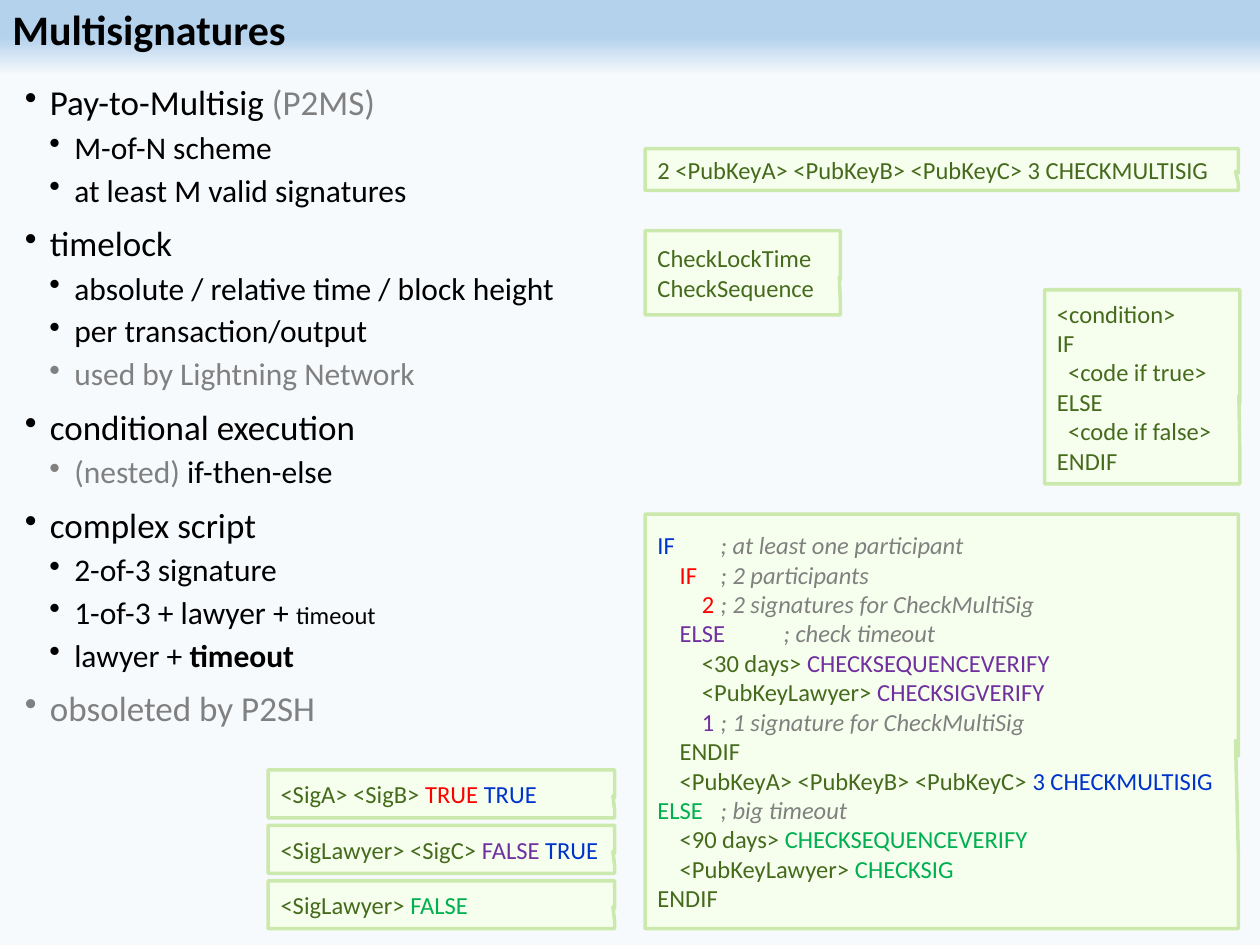
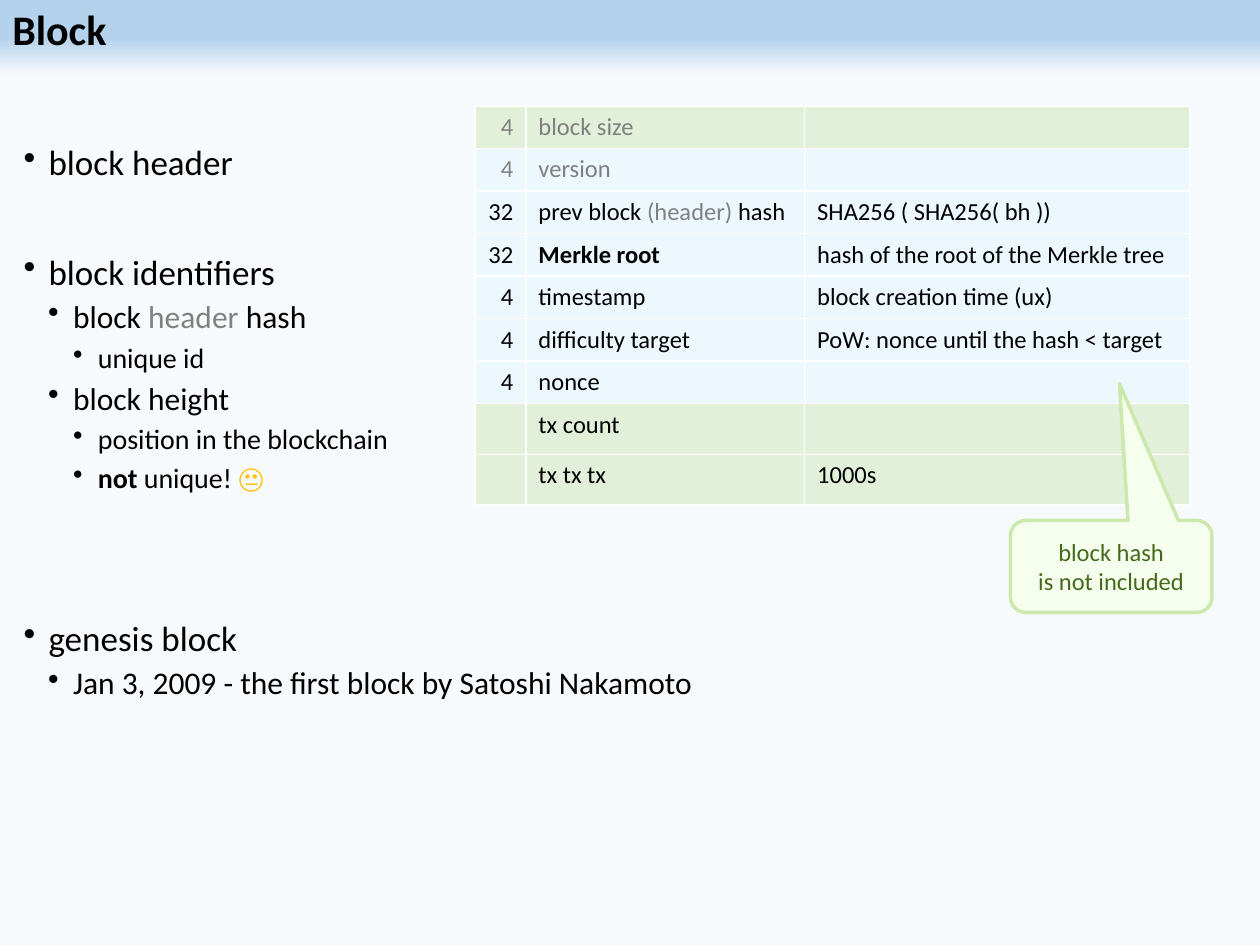
import copy
import dataclasses

import pptx
import pptx.dml.color
import pptx.enum.shapes
import pptx.enum.text
import pptx.oxml
import pptx.oxml.ns
import pptx.util

Pt = pptx.util.Pt
SHAPES = pptx.enum.shapes.MSO_SHAPE
ALIGN = pptx.enum.text.PP_ALIGN
ANCHOR = pptx.enum.text.MSO_ANCHOR


@dataclasses.dataclass(frozen=True)
class Theme:
    """Colours, font and type sizes shared by the slides."""
    font: str = "Calibri"
    black: str = "000000"
    grey: str = "808080"
    code: str = "456A1C"
    blue: str = "0033CC"
    red: str = "FF0000"
    purple: str = "7030A0"
    green: str = "00B050"
    yellow: str = "FFC000"
    callout_fill: str = "F6FFED"
    callout_line: str = "CCE9AD"
    outer_row: str = "E2F0D9"
    header_row: str = "ECF7FE"
    white: str = "FFFFFF"
    background: tuple = ((0, "B5D2EC"), (0.04, "B5D2EC"), (0.08, "F7FAFD"))
    title_size: int = 24
    code_size: int = 14
    level_sizes: tuple = (20, 18, 16)
    level_indents: tuple = (14.2, 28.2, 42.4)
    level_spacing: tuple = (10, 5, 5)


THEME = Theme()


def rgb(value):
    """Return a colour from its hexadecimal value."""
    return pptx.dml.color.RGBColor.from_string(value)


def set_values(target, values):
    """Set each attribute named in a dict."""
    for name, value in values.items():
        setattr(target, name, value)


def add_runs(paragraph, content, size, color):
    """Add a string, or a list of strings and (text, colour, format) tuples."""
    for part in [content] if isinstance(content, str) else content:
        text, run_color, values = part if isinstance(part, tuple) else (part, color, {})
        for index, line in enumerate(text.split("\n")):
            if index:
                paragraph.add_line_break()
            run = paragraph.add_run()
            run.text = line
            set_values(run.font, {"name": THEME.font, "size": Pt(size), **values})
            run.font.color.rgb = rgb(run_color)


def paragraphs_for(frame, count):
    """Return the given number of paragraphs of a text frame."""
    return [frame.paragraphs[0]] + [frame.add_paragraph() for _ in range(count - 1)]


def add_frame(slide, box, anchor):
    """Add a wrapping text box and return its text frame."""
    frame = slide.shapes.add_textbox(*map(Pt, box)).text_frame
    set_values(frame, {"word_wrap": True, "vertical_anchor": anchor})
    return frame


def add_slide(presentation, title):
    """Add a blank slide with the gradient band and its title."""
    slide = presentation.slides.add_slide(presentation.slide_layouts[6])
    fill = slide.background.fill
    fill.gradient()
    fill.gradient_angle = 270
    stop_list = next(slide.element.iter(pptx.oxml.ns.qn("a:gsLst")))
    stop_list.append(copy.deepcopy(stop_list[-1]))
    for stop, (position, color) in zip(fill.gradient_stops, THEME.background):
        stop.position = position
        stop.color.rgb = rgb(color)
    paragraph = add_frame(slide, (0, 0, 720, 36.7), ANCHOR.MIDDLE).paragraphs[0]
    paragraph.line_spacing = 0.9
    add_runs(paragraph, [(title, THEME.black, {"bold": True})], THEME.title_size, THEME.black)
    return slide


def add_bullets(slide, box, items):
    """Add bullets given as (level, content) with an optional space before."""
    frame = add_frame(slide, box, ANCHOR.TOP)
    for paragraph, (level, content, *space) in zip(paragraphs_for(frame, len(items)), items):
        before = space[0] if space else THEME.level_spacing[level]
        set_values(paragraph, {"level": level, "line_spacing": 0.9, "space_before": Pt(before)})
        properties = paragraph._p.get_or_add_pPr()
        properties.set("marL", str(Pt(THEME.level_indents[level])))
        properties.set("indent", str(-Pt(THEME.level_indents[0])))
        bullet = pptx.oxml.parse_xml(f'<a:buChar {pptx.oxml.ns.nsdecls("a")} char="•"/>')
        properties.append(bullet)
        add_runs(paragraph, content, THEME.level_sizes[level], THEME.black)


def add_callout(slide, box, lines, kind=SHAPES.RECTANGULAR_CALLOUT,
                adjustments=(0.495, 0.046), alignment=ALIGN.LEFT):
    """Add a callout whose lines are (indent, content) pairs."""
    shape = slide.shapes.add_shape(kind, *map(Pt, box))
    for index, value in enumerate(adjustments):
        shape.adjustments[index] = value
    shape.shadow.inherit = False
    shape.fill.solid()
    shape.fill.fore_color.rgb = rgb(THEME.callout_fill)
    shape.line.color.rgb = rgb(THEME.callout_line)
    shape.line.width = Pt(2)
    frame = shape.text_frame
    set_values(frame, {"word_wrap": True, "vertical_anchor": ANCHOR.MIDDLE})
    for paragraph, (indent, content) in zip(paragraphs_for(frame, len(lines)), lines):
        paragraph.alignment = alignment
        paragraph._p.get_or_add_pPr().set("indent", str(Pt(indent)))
        add_runs(paragraph, content, THEME.code_size, THEME.code)


def format_cell(cell, content, fill, color, alignment):
    """Give a cell its white borders, fill and text."""
    properties = cell._tc.get_or_add_tcPr()
    for side in ("lnL", "lnR", "lnT", "lnB"):
        properties.append(pptx.oxml.parse_xml(
            f'<a:{side} {pptx.oxml.ns.nsdecls("a")} w="{Pt(1)}"><a:solidFill>'
            f'<a:srgbClr val="{THEME.white}"/></a:solidFill></a:{side}>'))
    cell.fill.solid()
    cell.fill.fore_color.rgb = rgb(fill)
    paragraph = cell.text_frame.paragraphs[0]
    paragraph.alignment = alignment
    if content:
        add_runs(paragraph, content, THEME.code_size, color)
    else:
        paragraph._p.get_or_add_endParaRPr().set("sz", str(THEME.code_size * 100))


def add_block_table(slide, left, top, widths, rows):
    """Add the block layout table from (height, fill, colour, cells) rows."""
    height = sum(row[0] for row in rows)
    table = slide.shapes.add_table(len(rows), len(widths), Pt(left), Pt(top),
                                   Pt(sum(widths)), Pt(height)).table
    set_values(table, {"first_row": False, "horz_banding": False})
    for column, width in zip(table.columns, widths):
        column.width = Pt(width)
    for row, (row_height, fill, color, contents) in zip(table.rows, rows):
        row.height = Pt(row_height)
        for index, (cell, content) in enumerate(zip(row.cells, contents)):
            alignment = ALIGN.LEFT if index else ALIGN.RIGHT
            format_cell(cell, content, fill, color, alignment)


def colored(text, color, **values):
    """Return a run tuple with its own colour and format."""
    return text, color, values


def remark(text):
    """Return a grey italic script remark."""
    return colored(text, THEME.grey, italic=True)


def build_multisignatures(presentation):
    """Build the slide on multisignature scripts."""
    grey, blue, red = THEME.grey, THEME.blue, THEME.red
    purple, green = THEME.purple, THEME.green
    slide = add_slide(presentation, "Multisignatures")
    add_bullets(slide, (7.2, 45.4, 706, 488), [
        (0, ["Pay-to-Multisig ", colored("(P2MS)", grey)]),
        (1, "M-of-N scheme"),
        (1, "at least M valid signatures"),
        (0, "timelock"),
        (1, "absolute / relative time / block height"),
        (1, "per transaction/output"),
        (1, [colored("used by Lightning Network", grey)]),
        (0, "conditional execution"),
        (1, [colored("(nested) ", grey), "if-then-else"]),
        (0, "complex script"),
        (1, "2-of-3 signature"),
        (1, ["1-of-3 + lawyer + ", colored("timeout", THEME.black, size=Pt(14))]),
        (1, ["lawyer + ", colored("timeout", THEME.black, bold=True)]),
        (0, [colored("obsoleted by P2SH", grey)]),
    ])
    left, step = 368.6, 12.7
    add_callout(slide, (left, 131.8, 111.6, 48.2), [(0, "CheckLockTime"), (0, "CheckSequence")])
    add_callout(slide, (596.9, 165.6, 111.6, 110.9), [
        (0, "<condition>"), (0, "IF"), (step / 2, "<code if true>"),
        (0, "ELSE"), (step / 2, "<code if false>"), (0, "ENDIF"),
    ])
    add_callout(slide, (left, 293.8, 339.1, 236.9), [
        (0, [colored("IF\t", blue), remark("; at least one participant")]),
        (step, [colored("IF\t", red), remark("; 2 participants")]),
        (2 * step, [colored("2\t", red), remark("; 2 signatures for CheckMultiSig")]),
        (step, [colored("ELSE\t", purple), remark("; check timeout")]),
        (2 * step, ["<30 days> ", colored("CHECKSEQUENCEVERIFY", purple)]),
        (2 * step, ["<PubKeyLawyer> ", colored("CHECKSIGVERIFY", purple)]),
        (2 * step, [colored("1\t", purple), remark("; 1 signature for CheckMultiSig")]),
        (step, "ENDIF"),
        (step, ["<PubKeyA> <PubKeyB> <PubKeyC> ", colored("3 CHECKMULTISIG", blue)]),
        (0, [colored("ELSE\t", green), remark("; big timeout")]),
        (step, ["<90 days> ", colored("CHECKSEQUENCEVERIFY", green)]),
        (step, ["<PubKeyLawyer> ", colored("CHECKSIG", green)]),
        (0, "ENDIF"),
    ])
    unlocking_scripts = [
        ["<SigA> <SigB> ", colored("TRUE ", red), colored("TRUE", blue)],
        ["<SigLawyer> <SigC> ", colored("FALSE ", purple), colored("TRUE", blue)],
        ["<SigLawyer> ", colored("FALSE", green)],
    ]
    for index, content in enumerate(unlocking_scripts):
        add_callout(slide, (153.2, 439.9 + 31.7 * index, 198, 27.4), [(0, content)])
    add_callout(slide, (left, 85, 339.1, 23.8),
                [(0, "2 <PubKeyA> <PubKeyB> <PubKeyC> 3 CHECKMULTISIG")])


def build_block(presentation):
    """Build the slide on the block layout."""
    grey, black = THEME.grey, THEME.black
    slide = add_slide(presentation, "Block")
    add_bullets(slide, (6.5, 79.5, 706, 454), [
        (0, "block header"),
        (0, "block identifiers", 41),
        (1, ["block ", colored("header ", grey), "hash"]),
        (2, "unique id"),
        (1, "block height"),
        (2, "position in the blockchain"),
        (2, [colored("not", black, bold=True), " unique! ", colored("😐", THEME.yellow)]),
        (0, "genesis block", 72),
        (1, "Jan 3, 2009 - the first block by Satoshi Nakamoto"),
    ])
    header_fields = [
        ("32", ["prev block ", colored("(header)", grey), " hash"], "SHA256 ( SHA256( bh ))"),
        ("32", [colored("Merkle root", black, bold=True)], "hash of the root of the Merkle tree"),
        ("4", "timestamp", "block creation time (ux)"),
        ("4", "difficulty target", "PoW: nonce until the hash < target"),
        ("4", "nonce", ""),
    ]
    low, high = 24.3, 29.1
    rows = [(low, THEME.outer_row, grey, ("4", "block size", "")),
            (low, THEME.header_row, grey, ("4", "version", ""))]
    rows += [(low, THEME.header_row, black, field) for field in header_fields]
    rows += [(high, THEME.outer_row, black, ("", "tx count", "")),
             (high, THEME.outer_row, black, ("", "tx tx tx", "1000s"))]
    add_block_table(slide, 271.5, 60.5, (29, 159.3, 220), rows)
    add_callout(slide, (577.4, 297.4, 115.2, 52.6), [(0, "block hash\nis not included")],
                SHAPES.ROUNDED_RECTANGULAR_CALLOUT, (0.041, -1.987, 0.167), ALIGN.CENTER)


def main():
    """Build and save the presentation."""
    presentation = pptx.Presentation()
    set_values(presentation, {"slide_width": Pt(720), "slide_height": Pt(540)})
    build_multisignatures(presentation)
    build_block(presentation)
    presentation.save("out.pptx")


if __name__ == "__main__":
    main()
